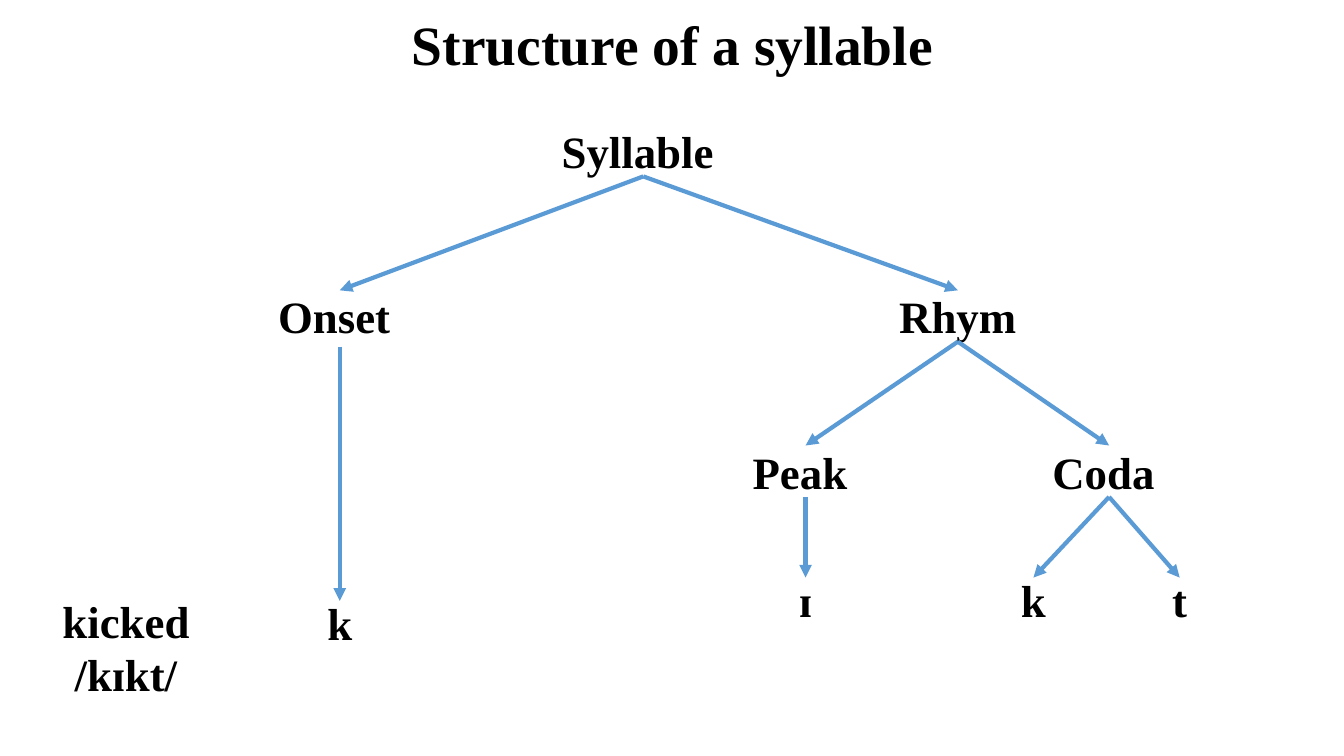
from dataclasses import dataclass

import pptx
import pptx.dml.color
import pptx.enum.shapes
import pptx.enum.text
import pptx.oxml
import pptx.oxml.ns
import pptx.slide
import pptx.util
from pptx.util import Inches

COLORS = {"text": "000000", "arrow": "5B9BD5", "background": "FFFFFF"}
FONT = "Times New Roman"


@dataclass(frozen=True)
class Label:
    """A text box placed by its horizontal centre and its top, in inches."""
    lines: tuple[str, ...]
    center: float
    top: float
    width: float
    height: float = 0.51
    size: float = 32
    line_spacing: float = 1.0

    @property
    def bottom(self) -> float:
        return self.top + self.height


@dataclass(frozen=True)
class Branch:
    parent: Label
    child: Label
    gap: float = 0.0


def sound(symbol: str, center: float, top: float = 5.73) -> Label:
    return Label((symbol,), center, top, 0.61, 0.44)


TITLE = Label(("Structure of a syllable",), 6.67, 0.1, 11.5, 0.75, 39.6, 0.9)
SYLLABLE = Label(("Syllable ",), 6.38, 1.24, 3.38)
ONSET = Label(("Onset ",), 3.37, 2.88, 2.11)
RHYME = Label(("Rhym",), 9.5, 2.88, 2.44)
PEAK = Label(("Peak ",), 7.99, 4.42, 1.82)
CODA = Label(("Coda ",), 11.0, 4.42, 1.41)
ONSET_K = sound("k", 3.37, 5.96)
PEAK_I = sound("ɪ", 7.99)
CODA_K = sound("k", 10.25)
CODA_T = sound("t", 11.7)
EXAMPLE = Label(("kicked", "/kɪkt/"), 1.25, 5.85, 1.79, 1.14)

LABELS = (TITLE, SYLLABLE, RHYME, ONSET, CODA, PEAK,
          ONSET_K, CODA_T, CODA_K, PEAK_I, EXAMPLE)
BRANCHES = (
    Branch(SYLLABLE, ONSET),
    Branch(SYLLABLE, RHYME),
    Branch(RHYME, PEAK),
    Branch(RHYME, CODA),
    Branch(ONSET, ONSET_K, gap=0.05),
    Branch(PEAK, PEAK_I),
    Branch(CODA, CODA_K),
    Branch(CODA, CODA_T),
)


def color(name: str) -> pptx.dml.color.RGBColor:
    return pptx.dml.color.RGBColor.from_string(COLORS[name])


def draw_label(slide: pptx.slide.Slide, label: Label) -> None:
    box = slide.shapes.add_textbox(
        Inches(label.center - label.width / 2), Inches(label.top),
        Inches(label.width), Inches(label.height))
    frame = box.text_frame
    frame.word_wrap = True
    frame.vertical_anchor = pptx.enum.text.MSO_ANCHOR.MIDDLE
    for index, line in enumerate(label.lines):
        paragraph = frame.add_paragraph() if index else frame.paragraphs[0]
        paragraph.alignment = pptx.enum.text.PP_ALIGN.CENTER
        paragraph.line_spacing = label.line_spacing
        run = paragraph.add_run()
        run.text = line
        run.font.name = FONT
        run.font.size = pptx.util.Pt(label.size)
        run.font.bold = True
        run.font.color.rgb = color("text")


def draw_branch(slide: pptx.slide.Slide, branch: Branch) -> None:
    """Draw an arrow from below the parent to the top of the child."""
    parent, child = branch.parent, branch.child
    arrow = slide.shapes.add_connector(
        pptx.enum.shapes.MSO_CONNECTOR.STRAIGHT,
        Inches(parent.center), Inches(parent.bottom + branch.gap),
        Inches(child.center), Inches(child.top))
    arrow.line.color.rgb = color("arrow")
    arrow.line.width = pptx.util.Pt(3)
    properties = arrow.element.spPr
    head = pptx.oxml.parse_xml(
        f'<a:tailEnd {pptx.oxml.ns.nsdecls("a")} type="triangle"/>')
    properties.find(pptx.oxml.ns.qn("a:ln")).append(head)
    properties.append(
        pptx.oxml.parse_xml(f'<a:effectLst {pptx.oxml.ns.nsdecls("a")}/>'))


def main() -> None:
    presentation = pptx.Presentation()
    presentation.slide_width = Inches(13.33)
    presentation.slide_height = Inches(7.5)
    slide = presentation.slides.add_slide(presentation.slide_layouts[6])
    slide.background.fill.solid()
    slide.background.fill.fore_color.rgb = color("background")
    for label in LABELS:
        draw_label(slide, label)
    for branch in BRANCHES:
        draw_branch(slide, branch)
    presentation.save("out.pptx")


if __name__ == "__main__":
    main()
